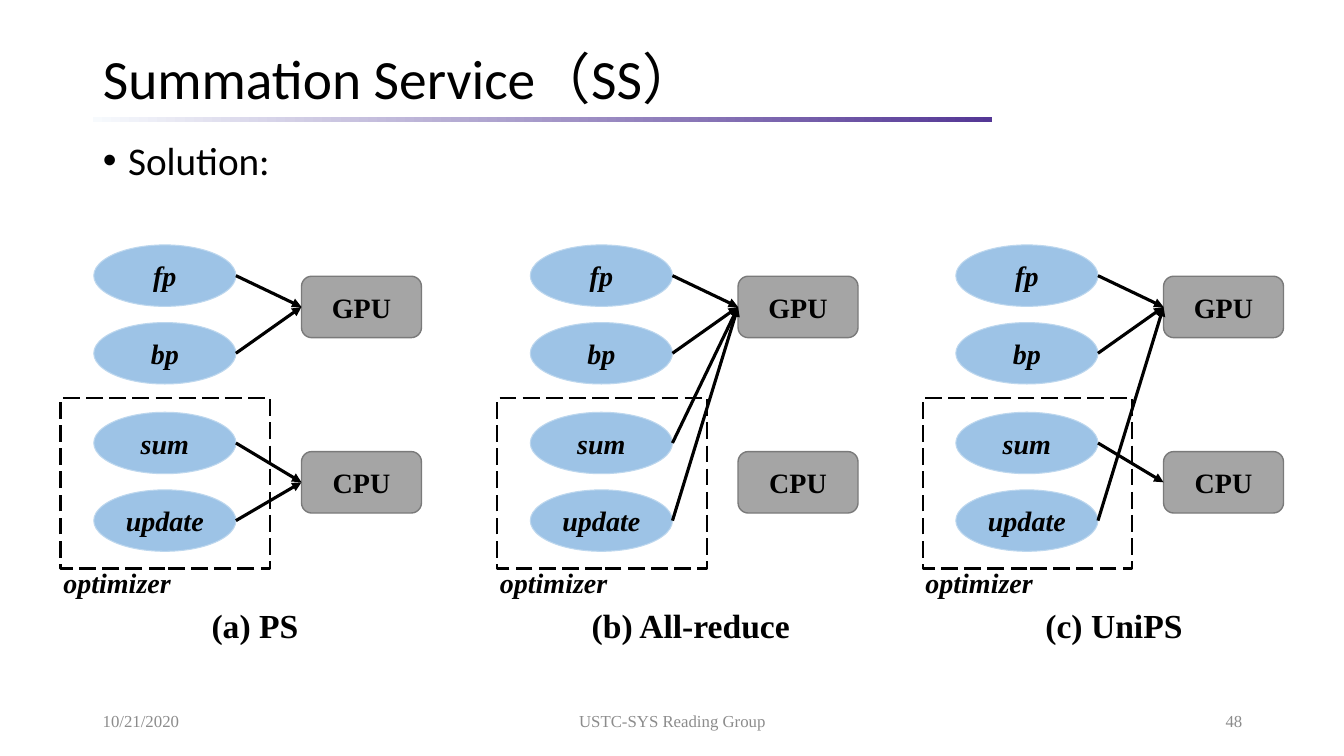
from lxml.etree import SubElement
from pptx import Presentation
from pptx.dml.color import RGBColor
from pptx.enum.dml import MSO_LINE_DASH_STYLE as Dash
from pptx.enum.shapes import MSO_CONNECTOR as Link, MSO_SHAPE as Shape
from pptx.enum.text import MSO_ANCHOR as Anchor, MSO_AUTO_SIZE as Fit, PP_ALIGN as Align
from pptx.oxml.ns import qn
from pptx.util import Inches, Pt

# Content
TITLE = "Summation Service（SS）"
BULLET = "Solution:"
FOOTERS = [  # text, left, width, alignment
    ("10/21/2020", 0.92, 3, Align.LEFT),
    ("USTC-SYS Reading Group", 4.42, 4.5, Align.CENTER),
    ("48", 9.42, 3, Align.RIGHT),
]
STEPS = {"fp": 2.43, "bp": 3.2, "sum": 4.09, "update": 4.86}  # name: top
DEVICES = {"GPU": 2.74, "CPU": 4.48}
PANELS = [  # caption, its left and width, panel left, device running each step
    ("(a) PS", 2, 1.16, 0.6, ("GPU", "GPU", "CPU", "CPU")),
    ("(b) All-reduce", 5.77, 2.43, 4.93, ("GPU", "GPU", "GPU", "GPU")),
    ("(c) UniPS", 10.27, 1.66, 9.15, ("GPU", "GPU", "CPU", "GPU")),
]
COLORS = {
    "text": "000000", "footer": "8C8C8C", "step": "9DC3E6", "step_line": "BDD7EE",
    "device": "A5A5A5", "device_line": "7A7A7A", "rule_start": "F7FAFD", "rule_end": "543795",
}
SERIF, SANS = "Times New Roman", "Calibri"
STEP_WIDTH, DEVICE_WIDTH, NODE_HEIGHT = 1.41, 1.19, 0.61
STEP_OFFSET, DEVICE_OFFSET = 0.33, 2.39

deck = Presentation()
deck.slide_width, deck.slide_height = Inches(13.33), Inches(7.5)
page = deck.slides.add_slide(deck.slide_layouts[1])


def color(name):
    return RGBColor.from_string(COLORS[name])


def write(box, text, size, name="text", face=SERIF, align=Align.LEFT, bold=False, italic=False):
    para = box.text_frame.paragraphs[0]
    para.text = text
    para.alignment = align
    font = para.font
    font.name, font.size, font.bold, font.italic = face, Pt(size), bold, italic
    font.color.rgb = color(name)
    return para


def add_label(text, left, top, width, height, size, **style):
    box = page.shapes.add_textbox(*map(Inches, (left, top, width, height)))
    box.text_frame.word_wrap = True
    write(box, text, size, **style)
    return box


def add_block(kind, left, top, width, height, fill=None, line="text", weight=1.5):
    block = page.shapes.add_shape(kind, *map(Inches, (left, top, width, height)))
    block.shadow.inherit = False
    if fill:
        block.fill.solid()
        block.fill.fore_color.rgb = color(fill)
    else:
        block.fill.background()
    block.line.color.rgb = color(line)
    block.line.width = Pt(weight)
    return block


def add_node(kind, text, left, top, width, fill, weight, italic):
    node = add_block(kind, left, top, width, NODE_HEIGHT, fill, fill + "_line", weight)
    node.text_frame.word_wrap = False
    node.text_frame.vertical_anchor = Anchor.MIDDLE
    write(node, text, 20, align=Align.CENTER, bold=True, italic=italic)
    return node


def add_arrow(step, device):
    x, y = step.left + step.width, step.top + step.height // 2
    arrow = page.shapes.add_connector(Link.STRAIGHT, x, y, x, y)
    arrow.end_connect(device, 1)
    arrow.line.color.rgb = color("text")
    arrow.line.width = Pt(2.25)
    SubElement(arrow.line._get_or_add_ln(), qn("a:tailEnd"), type="triangle")
    SubElement(arrow._element.spPr, qn("a:effectLst"))


# Rule under the title
rule = page.shapes.add_shape(Shape.RECTANGLE, *map(Inches, (0.92, 1.16, 8.92, 0.05)))
rule.shadow.inherit = False
rule.line.fill.background()
rule.fill.gradient()
rule.fill.gradient_angle = 0
for stop, name, position in zip(rule.fill.gradient_stops, ("rule_start", "rule_end"), (0, 1)):
    stop.color.rgb = color(name)
    stop.position = position

# Title and bullet
title, body = page.shapes.title, page.placeholders[1]
for holder, top, height in ((title, 0.43, 0.75), (body, 1.35, 5.43)):
    holder.left, holder.top, holder.width, holder.height = map(Inches, (0.92, top, 11.5, height))
    holder.text_frame.auto_size = Fit.NONE
title.text_frame.vertical_anchor = Anchor.MIDDLE
write(title, TITLE, 39.6, face=SANS).line_spacing = 0.9
bullet = write(body, BULLET, 28, face=SANS)
bullet.line_spacing, bullet.space_before = 0.9, Pt(0)
indent = bullet._p.get_or_add_pPr()
indent.set("marL", str(Inches(0.25)))
indent.set("indent", str(Inches(-0.25)))

# Footer
for text, left, width, align in FOOTERS:
    footer = add_label(text, left, 6.95, width, 0.4, 12, name="footer", align=align)
    footer.text_frame.vertical_anchor = Anchor.MIDDLE

# Panels
for caption, caption_left, caption_width, left, targets in PANELS:
    steps = [add_node(Shape.OVAL, text, left + STEP_OFFSET, top, STEP_WIDTH, "step", 0.75, True)
             for text, top in STEPS.items()]
    devices = {text: add_node(Shape.ROUNDED_RECTANGLE, text, left + DEVICE_OFFSET, top,
                              DEVICE_WIDTH, "device", 1, False)
               for text, top in DEVICES.items()}
    frame = add_block(Shape.RECTANGLE, left, 3.95, 2.08, 1.69)
    frame.line.dash_style = Dash.LONG_DASH
    add_label("optimizer", left - 0.07, 5.56, 1.6, 0.44, 20, bold=True, italic=True)
    for step, target in zip(steps, targets):
        add_arrow(step, devices[target])
    label = add_label(caption, caption_left, 5.95, caption_width, 0.5, 24, bold=True)
    label.text_frame.word_wrap = False

deck.save("out.pptx")
